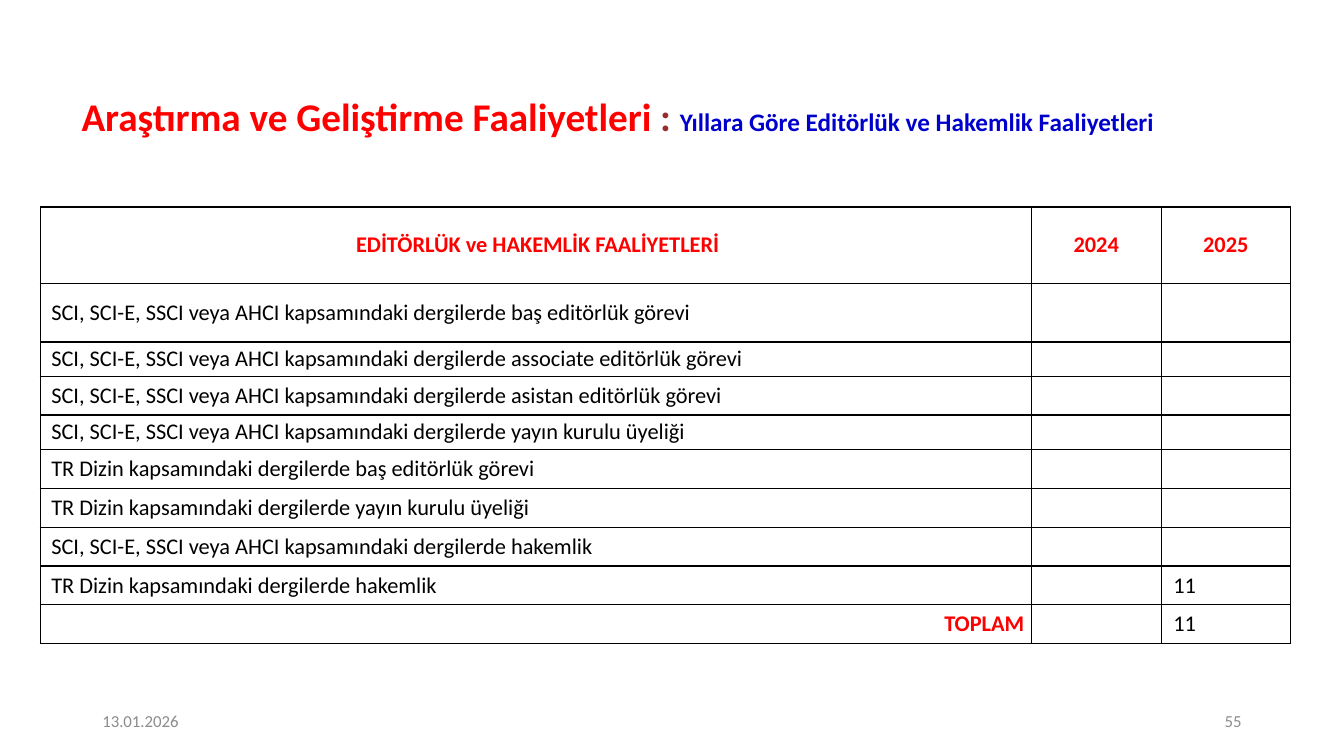
from lxml.etree import SubElement
from pptx import Presentation
from pptx.dml.color import RGBColor
from pptx.enum.text import MSO_ANCHOR as Anchor, MSO_AUTO_SIZE as AutoSize, PP_ALIGN as Align
from pptx.oxml.ns import qn
from pptx.util import Pt

COLORS = {
    "red": "FF0000", "maroon": "962E2E", "blue": "0000CC",
    "gray": "8C8C8C", "black": "000000", "white": "FFFFFF",
}


def add_text(paragraph, text, size=16, color="black", bold=False, align=Align.LEFT, indent=0):
    """Append one formatted run and set the paragraph's alignment and left indent."""
    paragraph.alignment = align
    if indent:
        paragraph._p.get_or_add_pPr().set("marL", str(Pt(indent)))
    run = paragraph.add_run()
    run.text = text
    run.font.name = "Calibri"
    run.font.size = Pt(size)
    run.font.bold = bold
    run.font.color.rgb = RGBColor.from_string(COLORS[color])


def format_cell(cell):
    """Give the cell thin black borders, a white fill and tight margins."""
    properties = cell._tc.get_or_add_tcPr()
    for side in ("lnL", "lnR", "lnT", "lnB"):
        border = SubElement(properties, qn(f"a:{side}"), w=str(Pt(1)))
        line_fill = SubElement(border, qn("a:solidFill"))
        SubElement(line_fill, qn("a:srgbClr"), val=COLORS["black"])
    cell.fill.solid()
    cell.fill.fore_color.rgb = RGBColor.from_string(COLORS["white"])
    cell.margin_left = cell.margin_right = Pt(5)
    cell.margin_top = cell.margin_bottom = 0
    cell.vertical_anchor = Anchor.MIDDLE


prs = Presentation()
prs.slide_width, prs.slide_height = Pt(960), Pt(540)
slide = prs.slides.add_slide(prs.slide_layouts[5])

# Title
title = slide.shapes.title
title.left, title.top, title.width, title.height = Pt(36.7), Pt(55.4), Pt(809.3), Pt(58.3)
title.text_frame.auto_size = AutoSize.NONE
title.text_frame.word_wrap = True
title.text_frame.vertical_anchor = Anchor.MIDDLE
heading = title.text_frame.paragraphs[0]
heading.line_spacing = 0.9
for text, size, color in (
    ("Araştırma ve Geliştirme Faaliyetleri ", 28, "red"),
    (": ", 28, "maroon"),
    ("Yıllara Göre Editörlük ve Hakemlik Faaliyetleri", 18, "blue"),
):
    add_text(heading, text, size=size, color=color, bold=True, align=Align.CENTER)

# Activity table
INDEXED = "SCI, SCI-E, SSCI veya AHCI kapsamındaki dergilerde "
TR_INDEX = "TR Dizin kapsamındaki dergilerde "
activities = [
    (INDEXED + "baş editörlük görevi", "", ""),
    (INDEXED + "associate editörlük görevi", "", ""),
    (INDEXED + "asistan editörlük görevi", "", ""),
    (INDEXED + "yayın kurulu üyeliği", "", ""),
    (TR_INDEX + "baş editörlük görevi", "", ""),
    (TR_INDEX + "yayın kurulu üyeliği", "", ""),
    (INDEXED + "hakemlik", "", ""),
    (TR_INDEX + "hakemlik", "", "11"),
]
rows = [("EDİTÖRLÜK ve HAKEMLİK FAALİYETLERİ", "2024", "2025"), *activities, ("TOPLAM", "", "11")]
row_heights = [54.7, 41.8, 24.5, 27.7, 24.5] + [27.8] * 5
column_widths = [707.8, 92.9, 92.2]
total_row = len(rows) - 1

table = slide.shapes.add_table(
    len(rows), len(column_widths), Pt(28.8), Pt(147.8),
    Pt(sum(column_widths)), Pt(sum(row_heights)),
).table
table.horz_banding = False
for column, width in zip(table.columns, column_widths):
    column.width = Pt(width)
for r, (values, height) in enumerate(zip(rows, row_heights)):
    table.rows[r].height = Pt(height)
    for c, value in enumerate(values):
        cell = table.cell(r, c)
        format_cell(cell)
        if not value:
            continue
        is_header, is_total_label = r == 0, r == total_row and c == 0
        emphasized = is_header or is_total_label
        add_text(
            cell.text_frame.paragraphs[0], value,
            color="red" if emphasized else "black", bold=emphasized,
            align=Align.CENTER if is_header else Align.RIGHT if is_total_label else Align.LEFT,
            indent=0 if is_total_label or (is_header and c) else 3.6 if c else 2.9,
        )

# Footer
for text, left, align in (("13.01.2026", 66, Align.LEFT), ("55", 678, Align.RIGHT)):
    footer = slide.shapes.add_textbox(Pt(left), Pt(500.5), Pt(216), Pt(28.8)).text_frame
    footer.word_wrap = True
    footer.vertical_anchor = Anchor.MIDDLE
    add_text(footer.paragraphs[0], text, size=12, color="gray", align=align)

prs.save("out.pptx")
